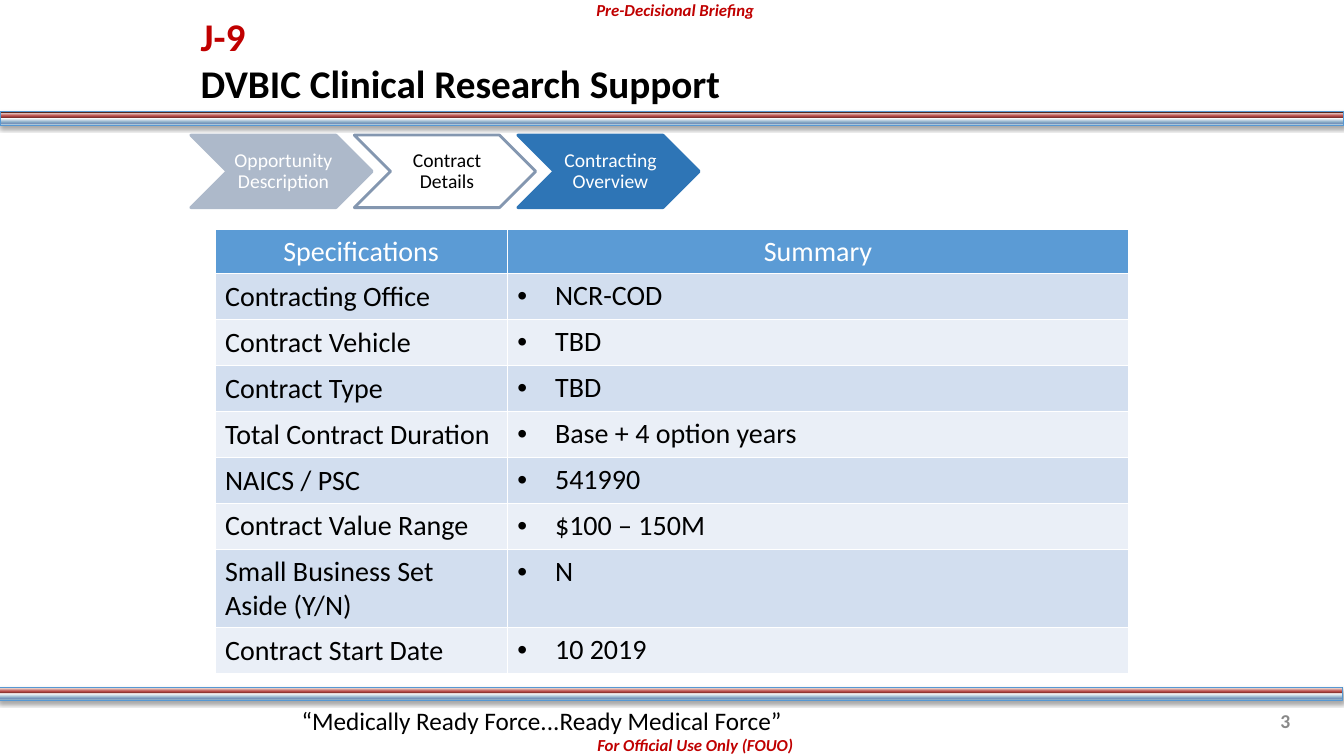
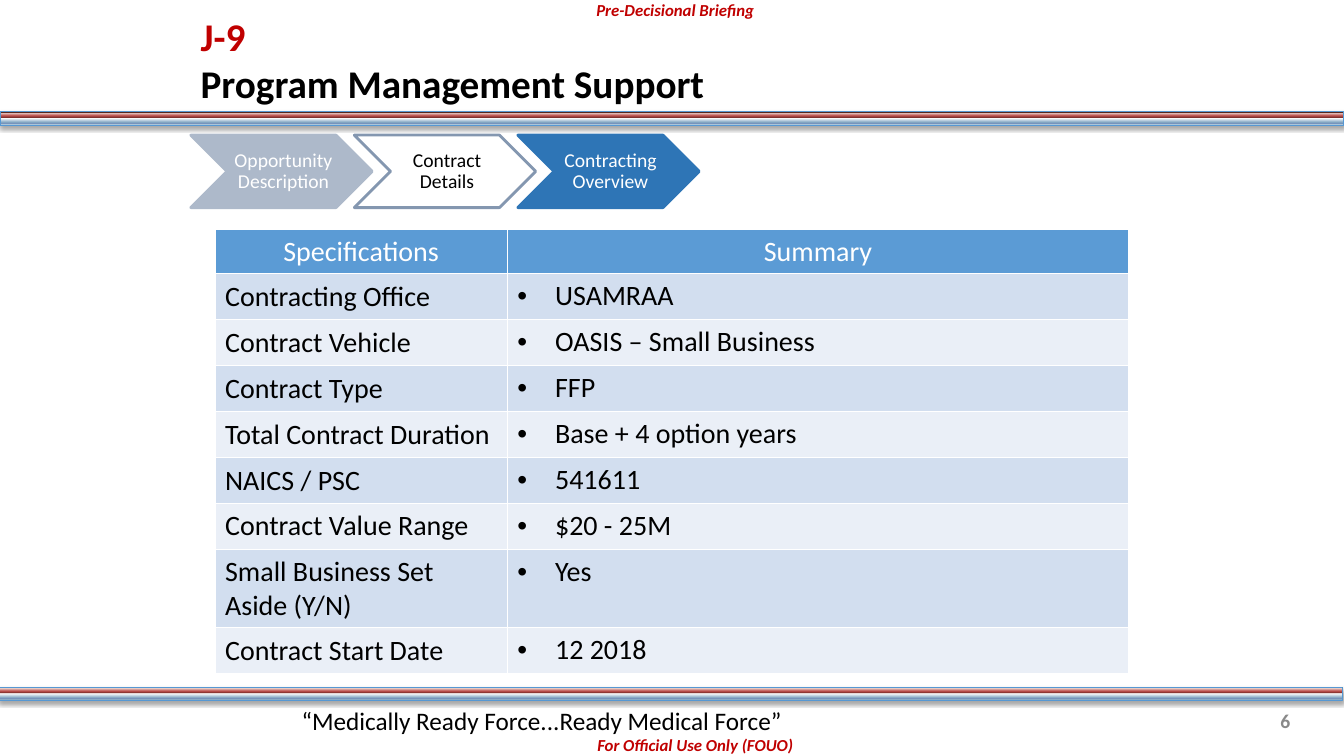
import pptx
import pptx.util
import pptx.dml.color
import pptx.enum.shapes
import pptx.enum.text
import pptx.oxml
import pptx.oxml.ns

Pt = pptx.util.Pt
ALIGN = pptx.enum.text.PP_ALIGN
ANCHOR = pptx.enum.text.MSO_ANCHOR
SHAPES = pptx.enum.shapes.MSO_SHAPE
qn = pptx.oxml.ns.qn

FONT = "Calibri"
BLACK, WHITE, RED, GREY = "000000", "FFFFFF", "C00000", "898989"
HEADER_FILL = "5B9BD5"
ROW_FILLS = ["D2DEEF", "EAEFF7"]
BAND_LINE = "5698D3"
BAND_STOPS = [
    (0, "DCEBF5"), (8, "83A7C3"), (13, "768FB9"), (21, "83A7C3"), (52, "FFFFFF"),
    (56, "9C6563"), (58, "80302D"), (71, "C0524E"), (94, "EBDAD4"), (100, "55261C"),
]
SLIDE_WIDTH, SLIDE_HEIGHT = 960, 540
BAND_HEIGHT = 9.4

STEPS = [
    ("Opportunity Description", "ADB9CA", "ADB9CA", WHITE),
    ("Contract Details", WHITE, "8497B0", BLACK),
    ("Contracting Overview", "2E75B6", "2E75B6", WHITE),
]
STEP_LEFT, STEP_TOP, STEP_WIDTH, STEP_HEIGHT, STEP_PITCH = 136.3, 96.5, 129.6, 51.8, 116.8

COLUMN_WIDTHS = [208.7, 444]
HEADER_HEIGHT, ROW_HEIGHT, TALL_ROW_HEIGHT = 31.4, 32.8, 56
TALL_ROW = "Small Business Set Aside (Y/N)"
SPECIFICATIONS = [
    "Contracting Office", "Contract Vehicle", "Contract Type", "Total Contract Duration",
    "NAICS / PSC", "Contract Value Range", TALL_ROW, "Contract Start Date",
]
BRIEFS = [
    ("DVBIC Clinical Research Support", "3",
     ["NCR-COD", "TBD", "TBD", "Base + 4 option years", "541990", "$100 – 150M", "N", "10 2019"]),
    ("Program Management Support", "6",
     ["USAMRAA", "OASIS – Small Business", "FFP", "Base + 4 option years", "541611",
      "$20 - 25M", "Yes", "12 2018"]),
]


def rgb(value):
    return pptx.dml.color.RGBColor.from_string(value)


def xml(tag, content):
    namespace = pptx.oxml.ns.nsdecls("a")
    return pptx.oxml.parse_xml(f"<a:{tag} {namespace}>{content}</a:{tag.split()[0]}>")


def add_text(frame, text, size=20, color=BLACK, bold=False, italic=False,
             align=ALIGN.LEFT, line_spacing=None, bullet=False):
    para = frame.paragraphs[-1]
    if para.runs:
        para = frame.add_paragraph()
    if bullet:
        properties = para._p.get_or_add_pPr()
        properties.set("marL", str(Pt(27)))
        properties.set("indent", str(-Pt(27)))
        properties.append(xml('buFont typeface="Arial"', ""))
        properties.append(xml('buChar char="•"', ""))
    para.alignment = align
    if line_spacing:
        para.line_spacing = line_spacing
    span = para.add_run()
    span.text = text
    span.font.name = FONT
    span.font.size = Pt(size)
    span.font.bold = bold
    span.font.italic = italic
    span.font.color.rgb = rgb(color)


def set_margins(frame, left, top, right, bottom):
    frame.margin_left, frame.margin_top = Pt(left), Pt(top)
    frame.margin_right, frame.margin_bottom = Pt(right), Pt(bottom)


def add_box(slide, left, top, width, height, anchor=ANCHOR.TOP):
    box = slide.shapes.add_textbox(Pt(left), Pt(top), Pt(width), Pt(height))
    frame = box.text_frame
    frame.word_wrap = True
    frame.vertical_anchor = anchor
    return frame


def add_shape(slide, kind, left, top, width, height, line, line_width):
    shape = slide.shapes.add_shape(kind, Pt(left), Pt(top), Pt(width), Pt(height))
    shape.shadow.inherit = False
    shape.line.color.rgb = rgb(line)
    shape.line.width = Pt(line_width)
    return shape


def add_band(slide, left, top):
    band = add_shape(slide, SHAPES.RECTANGLE, left, top, SLIDE_WIDTH, BAND_HEIGHT, BAND_LINE, 0.75)
    band.fill.gradient()
    band.fill.gradient_angle = 90
    properties = band._element.spPr
    stops = properties.find(qn("a:gradFill")).find(qn("a:gsLst"))
    for stop in list(stops):
        stops.remove(stop)
    for position, color in BAND_STOPS:
        stops.append(xml(f'gs pos="{position * 1000}"', f'<a:srgbClr val="{color}"/>'))
    properties.find(qn("a:effectLst")).append(xml(
        f'outerShdw blurRad="{Pt(3.1)}" dist="{Pt(1.8)}" dir="5400000" rotWithShape="0"',
        '<a:srgbClr val="000000"><a:alpha val="35000"/></a:srgbClr>'))


def add_frame(slide, title, number):
    add_band(slide, 0, 80)
    add_band(slide, -0.7, 491)
    marking = dict(size=12, color=RED, bold=True, italic=True, align=ALIGN.CENTER)
    add_text(add_box(slide, 203, 521.3, 587.5, 21.6), "For Official Use Only (FOUO)", **marking)
    add_text(add_box(slide, 388.8, -3.6, 187.2, 21.6), "Pre-Decisional Briefing", **marking)
    heading = add_box(slide, 136.3, 10, 534, 64.8, ANCHOR.MIDDLE)
    set_margins(heading, 7.2, 0, 7.2, 0)
    add_text(heading, "J-9", size=28, color=RED, bold=True)
    add_text(heading, title, size=28, bold=True)
    add_text(add_box(slide, 208.3, 500.4, 552, 28.8),
             "“Medically Ready Force...Ready Medical Force”", size=18)
    add_text(add_box(slide, 864.7, 500.4, 64, 28.8, ANCHOR.MIDDLE),
             number, size=14, color=GREY, bold=True, align=ALIGN.RIGHT)


def add_steps(slide):
    for index, (label, fill, line, color) in enumerate(STEPS):
        step = add_shape(slide, SHAPES.CHEVRON, STEP_LEFT + index * STEP_PITCH, STEP_TOP,
                         STEP_WIDTH, STEP_HEIGHT, line, 2)
        step.fill.solid()
        step.fill.fore_color.rgb = rgb(fill)
        frame = step.text_frame
        frame.word_wrap = True
        frame.vertical_anchor = ANCHOR.MIDDLE
        set_margins(frame, 4.3, 1.4, 1.4, 1.4)
        add_text(frame, label, size=14, color=color, align=ALIGN.CENTER, line_spacing=0.9)


def fill_cell(cell, text, fill, anchor=ANCHOR.MIDDLE, **text_format):
    add_text(cell.text_frame, text, **text_format)
    cell.vertical_anchor = anchor
    properties = cell._tc.get_or_add_tcPr()
    for side in ("lnL", "lnR", "lnT", "lnB"):
        properties.append(xml(f'{side} w="{Pt(1)}"',
                              f'<a:solidFill><a:srgbClr val="{WHITE}"/></a:solidFill>'))
    cell.fill.solid()
    cell.fill.fore_color.rgb = rgb(fill)


def add_summary_table(slide, summaries):
    heights = [HEADER_HEIGHT] + [
        TALL_ROW_HEIGHT if name == TALL_ROW else ROW_HEIGHT for name in SPECIFICATIONS]
    table = slide.shapes.add_table(len(heights), len(COLUMN_WIDTHS), Pt(153.6), Pt(164.2),
                                   Pt(sum(COLUMN_WIDTHS)), Pt(sum(heights))).table
    table.horz_banding = False
    for column, width in zip(table.columns, COLUMN_WIDTHS):
        column.width = Pt(width)
    for row, height in zip(table.rows, heights):
        row.height = Pt(height)
    for column, text in enumerate(["Specifications", "Summary"]):
        fill_cell(table.cell(0, column), text, HEADER_FILL, color=WHITE, align=ALIGN.CENTER)
    for index, (name, summary) in enumerate(zip(SPECIFICATIONS, summaries)):
        fill = ROW_FILLS[index % 2]
        fill_cell(table.cell(index + 1, 0), name, fill)
        fill_cell(table.cell(index + 1, 1), summary, fill, ANCHOR.TOP, bullet=True)


def main():
    deck = pptx.Presentation()
    deck.slide_width, deck.slide_height = Pt(SLIDE_WIDTH), Pt(SLIDE_HEIGHT)
    for title, number, summaries in BRIEFS:
        slide = deck.slides.add_slide(deck.slide_layouts[6])
        add_frame(slide, title, number)
        add_steps(slide)
        add_summary_table(slide, summaries)
    deck.save("out.pptx")


if __name__ == "__main__":
    main()
